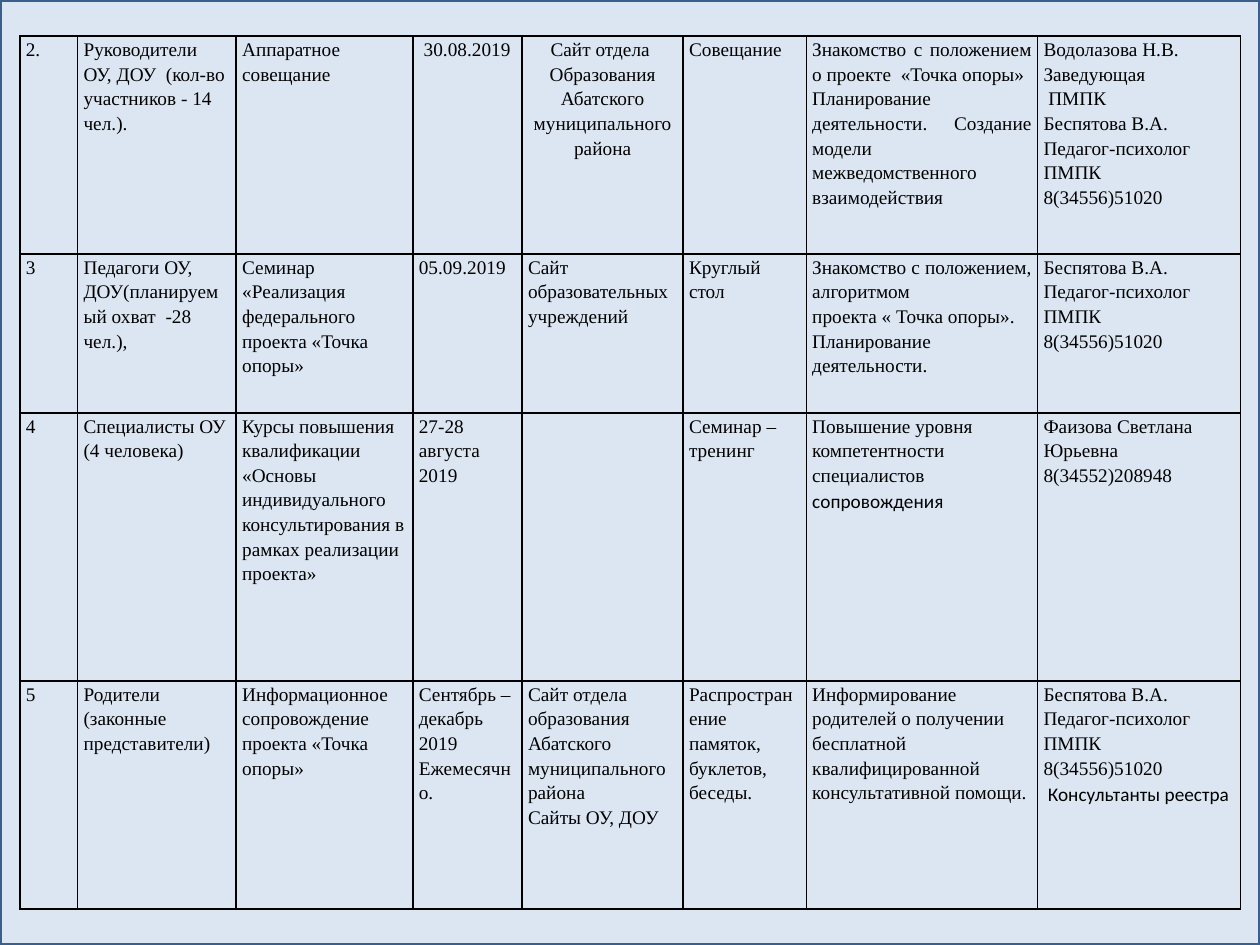
from pptx import Presentation
from pptx.dml.color import RGBColor
from pptx.enum.shapes import MSO_SHAPE
from pptx.enum.text import PP_ALIGN
from pptx.util import Pt
from pptx.oxml import parse_xml
from pptx.oxml.ns import nsdecls

BLACK = RGBColor(0x00, 0x00, 0x00)
PALE_BLUE = RGBColor(0xDC, 0xE6, 0xF2)
FRAME_BLUE = RGBColor(0x3A, 0x5F, 0x8C)

PAGE_WIDTH, PAGE_HEIGHT = 720, 540
TABLE_LEFT, TABLE_TOP = 11.4, 20.7
COLUMN_WIDTHS = [33, 90.6, 101, 62.4, 92, 70.4, 132.2, 115.8]
ROW_HEIGHTS = [124.4, 90.8, 153.2, 130.4]

PSYCHOLOGIST = "Беспятова В.А.\nПедагог-психолог\nПМПК\n8(34556)51020"
ROWS = [
    [
        "2.",
        "Руководители ОУ, ДОУ  (кол-во участников - 14 чел.).",
        "Аппаратное совещание",
        " 30.08.2019",
        "Сайт отдела \nОбразования Абатского муниципального района",
        "Совещание",
        "Знакомство с положением о проекте  «Точка опоры»\n"
        "Планирование деятельности. Создание модели межведомственного взаимодействия",
        "Водолазова Н.В.\nЗаведующая\n ПМПК\n" + PSYCHOLOGIST,
    ],
    [
        "3",
        "Педагоги ОУ, ДОУ(планируемый охват  -28 чел.),",
        "Семинар «Реализация федерального проекта «Точка опоры»",
        "05.09.2019",
        "Сайт образовательных учреждений",
        "Круглый стол",
        "Знакомство с положением, алгоритмом\nпроекта « Точка опоры».\n"
        "Планирование деятельности.",
        PSYCHOLOGIST,
    ],
    [
        "4",
        "Специалисты ОУ\n(4 человека)",
        "Курсы повышения квалификации «Основы индивидуального "
        "консультирования в рамках реализации проекта»",
        "27-28 августа\n2019",
        "",
        "Семинар –тренинг",
        "Повышение уровня\nкомпетентности специалистов\nсопровождения",
        "Фаизова Светлана\nЮрьевна\n8(34552)208948",
    ],
    [
        "5",
        "Родители (законные представители)",
        "Информационное сопровождение проекта «Точка опоры»",
        "Сентябрь – декабрь 2019\nЕжемесячно.",
        "Сайт отдела образования  Абатского муниципального района\nСайты ОУ, ДОУ",
        "Распространение памяток, буклетов, беседы.",
        "Информирование  родителей о получении бесплатной "
        "квалифицированной консультативной помощи.",
        PSYCHOLOGIST + "\n Консультанты реестра",
    ],
]
ALIGNMENTS = {(0, 4): PP_ALIGN.CENTER, (0, 6): PP_ALIGN.JUSTIFY, (1, 6): PP_ALIGN.JUSTIFY}
SANS_LINES = {"сопровождения", " Консультанты реестра"}

CELL_FORMAT = {
    "margin_left": Pt(3.4),
    "margin_right": Pt(3.4),
    "margin_top": Pt(0),
    "margin_bottom": Pt(0),
}
TEXT_FORMAT = {"size": Pt(11), "bold": False}
TABLE_FORMAT = {"first_row": False, "horz_banding": False}


def apply_format(target, values):
    for name, value in values.items():
        setattr(target, name, value)


def add_borders(cell):
    properties = cell._tc.get_or_add_tcPr()
    for side in ("lnL", "lnR", "lnT", "lnB"):
        properties.append(parse_xml(
            f'<a:{side} {nsdecls("a")} w="{Pt(1)}"><a:solidFill>'
            f'<a:srgbClr val="{BLACK}"/></a:solidFill></a:{side}>'
        ))


def fill_cell(cell, text, alignment):
    apply_format(cell, CELL_FORMAT)
    add_borders(cell)
    cell.fill.background()
    frame = cell.text_frame
    for index, line in enumerate(text.split("\n")):
        para = frame.add_paragraph() if index else frame.paragraphs[0]
        apply_format(para, {"alignment": alignment, "line_spacing": 1.15})
        if line:
            span = para.add_run()
            span.text = line
            apply_format(span.font, TEXT_FORMAT)
            span.font.name = "Calibri" if line in SANS_LINES else "Times New Roman"
            span.font.color.rgb = BLACK


def main():
    deck = Presentation()
    apply_format(deck, {"slide_width": Pt(PAGE_WIDTH), "slide_height": Pt(PAGE_HEIGHT)})
    page = deck.slides.add_slide(deck.slide_layouts[6])

    backdrop = page.shapes.add_shape(
        MSO_SHAPE.RECTANGLE, 0, 0, Pt(PAGE_WIDTH), Pt(PAGE_HEIGHT))
    backdrop.shadow.inherit = False
    backdrop.fill.solid()
    backdrop.fill.fore_color.rgb = PALE_BLUE
    backdrop.line.color.rgb = FRAME_BLUE
    backdrop.line.width = Pt(2)

    table = page.shapes.add_table(
        len(ROWS), len(COLUMN_WIDTHS), Pt(TABLE_LEFT), Pt(TABLE_TOP),
        Pt(sum(COLUMN_WIDTHS)), Pt(sum(ROW_HEIGHTS))).table
    apply_format(table, TABLE_FORMAT)
    for column, width in zip(table.columns, COLUMN_WIDTHS):
        column.width = Pt(width)
    for row, height in zip(table.rows, ROW_HEIGHTS):
        row.height = Pt(height)
    for r, texts in enumerate(ROWS):
        for c, text in enumerate(texts):
            fill_cell(table.cell(r, c), text, ALIGNMENTS.get((r, c), PP_ALIGN.LEFT))

    deck.save("out.pptx")


if __name__ == "__main__":
    main()
